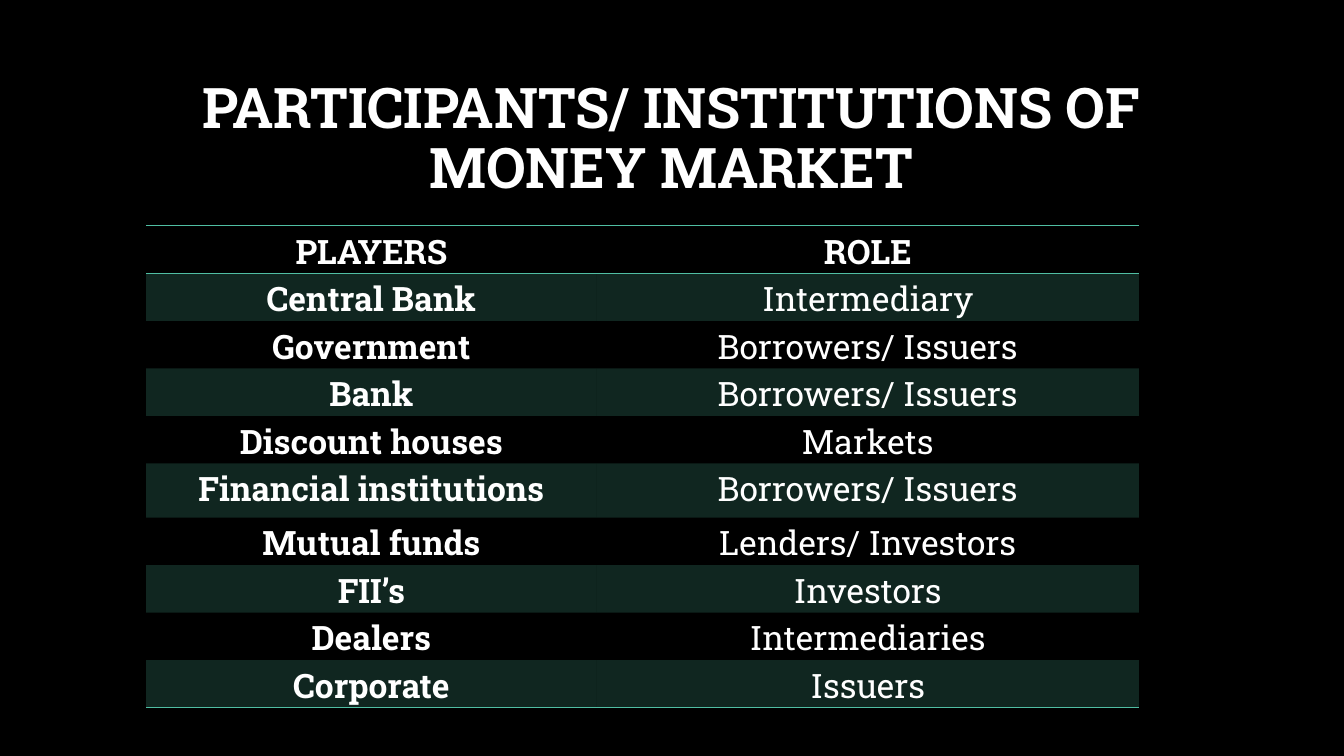
from lxml import etree
from pptx import Presentation
from pptx.dml.color import RGBColor
from pptx.enum import text
from pptx.oxml import ns
from pptx.util import Pt

FONT = "Roboto Slab"
WHITE, BLACK, GREEN = "FFFFFF", "000000", "50BEA3"
NO_STYLE = "{2D5ABB26-0587-4C30-8999-92F81FD0307C}"
ROWS = [
    ("PLAYERS", "ROLE"),
    ("Central Bank", "Intermediary"),
    ("Government", "Borrowers/ Issuers"),
    ("Bank", "Borrowers/ Issuers"),
    ("Discount houses", "Markets"),
    ("Financial institutions", "Borrowers/ Issuers"),
    ("Mutual funds", "Lenders/ Investors"),
    ("FII’s", "Investors"),
    ("Dealers", "Intermediaries"),
    ("Corporate", "Issuers"),
]
COLUMN_WIDTHS = (321.8, 387.4)
ROW_HEIGHT, TALL_ROW_HEIGHT, TALL_ROW = 31, 38.8, 5


def paint(fill, color):
    """Give a fill one solid colour."""
    fill.solid()
    fill.fore_color.rgb = RGBColor.from_string(color)


def write(frame, words, size, bold, spacing):
    """Put one centred white paragraph into a text frame."""
    frame.text = words
    frame.word_wrap = True
    para = frame.paragraphs[0]
    para.alignment = text.PP_ALIGN.CENTER
    para.line_spacing = spacing
    font = para.runs[0].font
    font.name, font.size, font.bold = FONT, Pt(size), bold
    font.color.rgb = RGBColor.from_string(WHITE)
    return para


def add_title(page, words):
    """Place and format the title placeholder."""
    title = page.shapes.title
    title.left, title.top, title.width, title.height = Pt(72), Pt(48.2), Pt(815), Pt(104.4)
    title.text_frame.vertical_anchor = text.MSO_ANCHOR.MIDDLE
    write(title.text_frame, words, 40, True, 0.9)


def tint(cell):
    """Fill a cell with green at 20 percent opacity."""
    paint(cell.fill, GREEN)
    color = cell._tc.tcPr.find(".//" + ns.qn("a:srgbClr"))
    etree.SubElement(color, ns.qn("a:alpha"), val="20000")


def add_borders(cell, sides):
    """Draw one-point green lines on the named sides of a cell."""
    properties = cell._tc.get_or_add_tcPr()
    for position, side in enumerate(sides):
        line = etree.Element(ns.qn("a:ln" + side), w=str(Pt(1)))
        solid = etree.SubElement(line, ns.qn("a:solidFill"))
        etree.SubElement(solid, ns.qn("a:srgbClr"), val=GREEN)
        properties.insert(position, line)


def add_role_table(page):
    """Add the table of players and roles."""
    frame = page.shapes.add_table(
        len(ROWS), len(COLUMN_WIDTHS), Pt(104.4), Pt(161.3),
        Pt(sum(COLUMN_WIDTHS)), Pt(ROW_HEIGHT * len(ROWS)))
    table = frame.table
    table.horz_banding = False
    table._tbl.tblPr.find(ns.qn("a:tableStyleId")).text = NO_STYLE
    for column, width in zip(table.columns, COLUMN_WIDTHS):
        column.width = Pt(width)
    borders = {0: "TB", len(ROWS) - 1: "B"}
    for i, words in enumerate(ROWS):
        table.rows[i].height = Pt(TALL_ROW_HEIGHT if i == TALL_ROW else ROW_HEIGHT)
        for j, word in enumerate(words):
            cell = table.cell(i, j)
            cell.margin_left = cell.margin_right = Pt(5)
            cell.margin_top = cell.margin_bottom = Pt(0)
            para = write(cell.text_frame, word, 24, i == 0 or j == 0, 1.07)
            para.space_after = Pt(8)
            if i % 2:
                tint(cell)
            else:
                cell.fill.background()
            add_borders(cell, borders.get(i, ""))


def main():
    """Build and save the slide."""
    deck = Presentation()
    deck.slide_width, deck.slide_height = Pt(960), Pt(540)
    page = deck.slides.add_slide(deck.slide_layouts[5])
    paint(page.background.fill, BLACK)
    add_title(page, "PARTICIPANTS/ INSTITUTIONS OF MONEY MARKET")
    add_role_table(page)
    deck.save("out.pptx")


if __name__ == "__main__":
    main()
